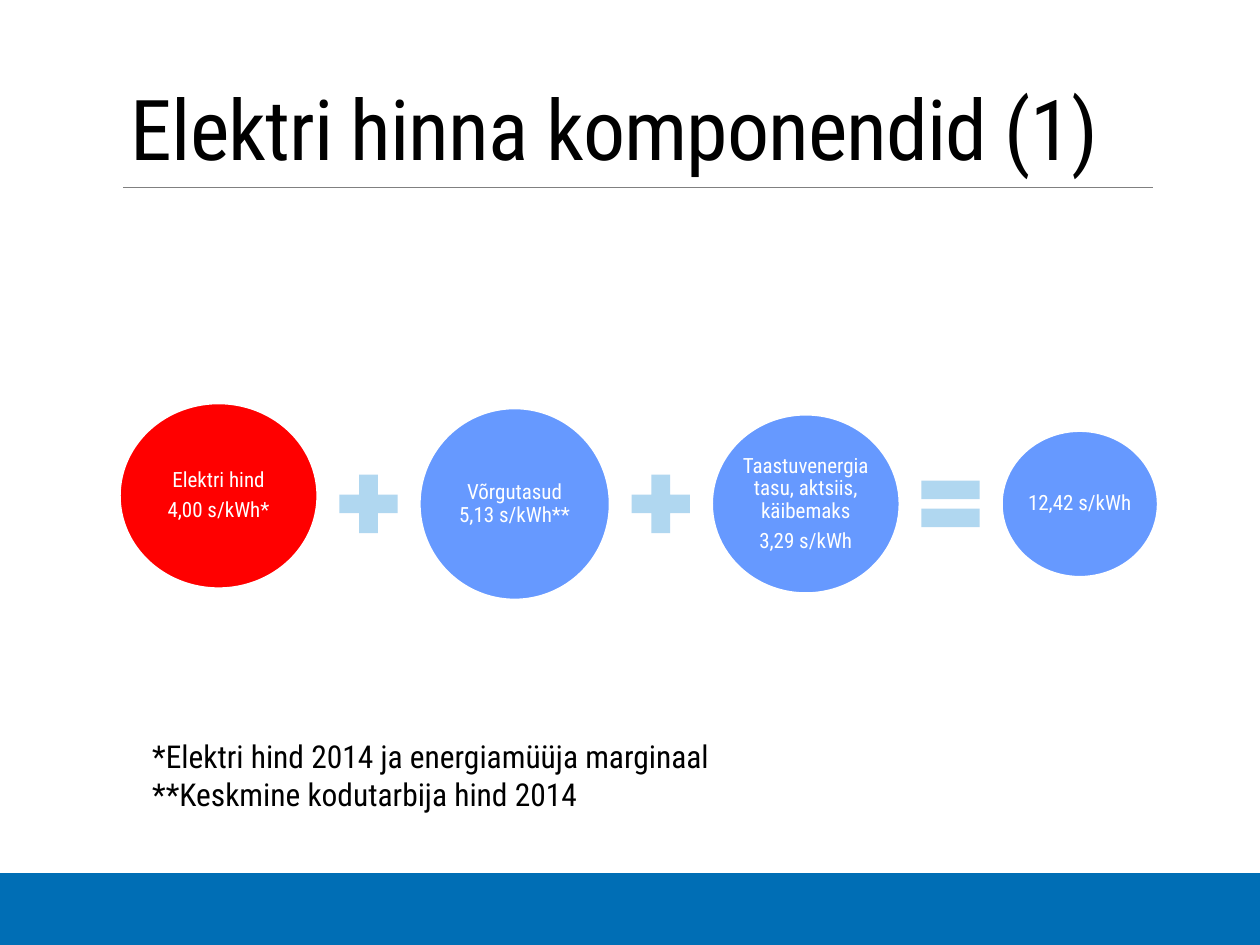
from lxml.etree import SubElement
from pptx import Presentation
from pptx.dml.color import RGBColor
from pptx.enum.shapes import MSO_CONNECTOR as Conn, MSO_SHAPE as Shape
from pptx.enum.text import MSO_ANCHOR as Anchor, PP_ALIGN as Align
from pptx.oxml.ns import qn
from pptx.util import Inches, Pt

FONT = "Roboto Condensed"
BLACK = RGBColor(0x00, 0x00, 0x00)
WHITE = RGBColor(0xFF, 0xFF, 0xFF)
GREY = RGBColor(0x80, 0x80, 0x80)
RED = RGBColor(0xFF, 0x00, 0x00)
BLUE = RGBColor(0x66, 0x99, 0xFF)
PALE_BLUE = RGBColor(0xB0, 0xD7, 0xF0)
BAND_BLUE = RGBColor(0x00, 0x6E, 0xB5)

WIDTH, HEIGHT = Inches(10), Inches(7.5)


def across(percent):
    """Length as a percentage of the slide's width."""
    return round(WIDTH * percent / 100)


def down(percent):
    """Length as a percentage of the slide's height."""
    return round(HEIGHT * percent / 100)


ROW_START, ROW_GAP = across(9.5), across(0.9)
OPERATOR_SIZE = across(6.3)
ROW_CENTRE, FIRST_CENTRE = down(53.33), down(52.47)

# Each term: width, height, centre, fill, paragraphs, operator that follows
TERMS = [
    (across(15.7), down(19.6), FIRST_CENTRE, RED,
     ["Elektri hind", "4,00 s/kWh*"], Shape.MATH_PLUS),
    (across(15.1), down(20.27), ROW_CENTRE, BLUE,
     ["Võrgutasud 5,13 s/kWh**"], Shape.MATH_PLUS),
    (across(14.9), down(18.93), ROW_CENTRE, BLUE,
     ["Taastuvenergia tasu, aktsiis, käibemaks", "3,29 s/kWh"], Shape.MATH_EQUAL),
    (across(12.4), down(15.47), ROW_CENTRE, BLUE, ["12,42 s/kWh"], None),
]


def write(tf, lines, size, color, align=Align.LEFT, spacing=1.0, after=0):
    tf.word_wrap = True
    for i, line in enumerate(lines):
        p = tf.paragraphs[0] if i == 0 else tf.add_paragraph()
        p.alignment, p.line_spacing = align, spacing
        p.space_after = Pt(after if i < len(lines) - 1 else 0)
        r = p.add_run()
        r.text = line
        r.font.name, r.font.size = FONT, Pt(size)
        r.font.color.rgb = color


def add_filled(s, kind, box, fill):
    sp = s.shapes.add_shape(kind, *box)
    sp.shadow.inherit = False
    sp.fill.solid()
    sp.fill.fore_color.rgb = fill
    sp.line.fill.background()
    return sp


def add_rule(s, left, right, y):
    line = s.shapes.add_connector(Conn.STRAIGHT, left, y, right, y)
    line.line.color.rgb, line.line.width = GREY, Pt(0.5)
    SubElement(line._element.spPr, qn("a:effectLst"))


def add_title(s, text):
    tf = s.shapes.add_textbox(across(9.4), down(3.73), across(82.5), down(15.73)).text_frame
    tf.vertical_anchor = Anchor.BOTTOM
    write(tf, [text], 48, BLACK, spacing=0.85)
    tf.paragraphs[0].runs[0].font._element.set("spc", "-50")


def add_circle(s, box, fill, lines):
    sp = add_filled(s, Shape.OVAL, box, fill)
    sp.line.color.rgb, sp.line.width = WHITE, Pt(1.25)
    tf = sp.text_frame
    tf.margin_left = tf.margin_right = tf.margin_top = tf.margin_bottom = Inches(0.02)
    tf.vertical_anchor = Anchor.MIDDLE
    write(tf, lines, 12, WHITE, Align.CENTER, spacing=0.9, after=4.2)


def add_equation(s):
    """Lay circles and operators left to right with equal gaps."""
    x = ROW_START
    for width, height, centre, fill, lines, operator in TERMS:
        add_circle(s, (x, centre - height // 2, width, height), fill, lines)
        x += width + ROW_GAP
        if operator is not None:
            top = ROW_CENTRE - OPERATOR_SIZE // 2
            add_filled(s, operator, (x, top, OPERATOR_SIZE, OPERATOR_SIZE), PALE_BLUE)
            x += OPERATOR_SIZE + ROW_GAP


def add_footnotes(s, lines):
    tb = s.shapes.add_textbox(across(11.1), down(77.33), across(48.5), down(9.47))
    write(tb.text_frame, lines, 18, BLACK)


def main():
    prs = Presentation()
    prs.slide_width, prs.slide_height = WIDTH, HEIGHT
    s = prs.slides.add_slide(prs.slide_layouts[6])
    add_filled(s, Shape.RECTANGLE, (0, down(92.4), WIDTH, down(7.6)), BAND_BLUE)
    add_rule(s, across(9.8), across(91.5), down(19.87))
    add_title(s, "Elektri hinna komponendid (1)")
    add_equation(s)
    add_footnotes(s, ["*Elektri hind 2014 ja energiamüüja marginaal",
                      "**Keskmine kodutarbija hind 2014"])
    prs.save("out.pptx")


if __name__ == "__main__":
    main()
